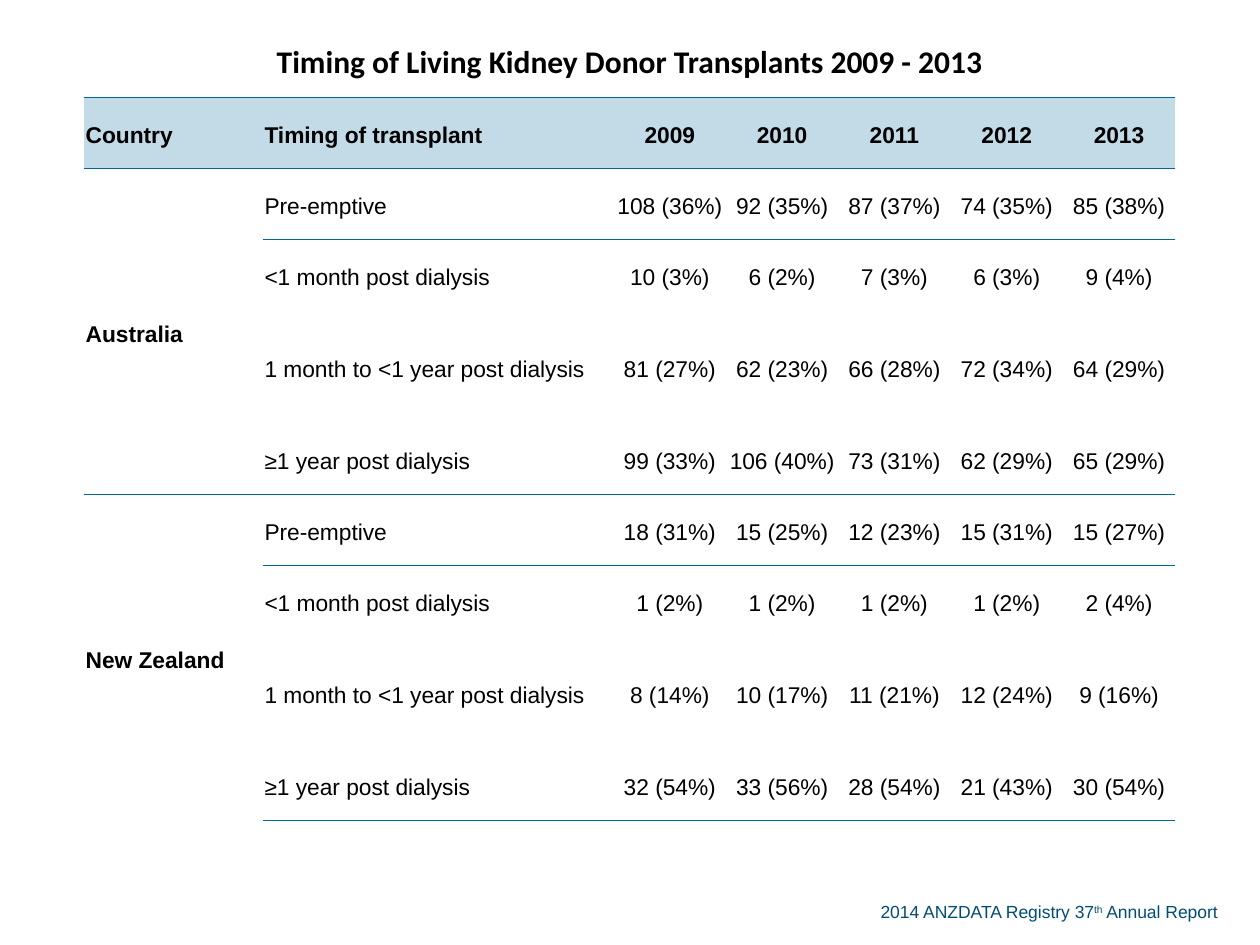
"""Build the slide on the timing of living kidney donor transplants."""
import lxml.etree
import pptx
import pptx.dml.color
import pptx.enum.text
import pptx.oxml.ns
import pptx.util

Pt = pptx.util.Pt
RGBColor = pptx.dml.color.RGBColor
ALIGN = pptx.enum.text.PP_ALIGN
qn = pptx.oxml.ns.qn

BLACK = RGBColor(0x00, 0x00, 0x00)
HEADER_BLUE = RGBColor(0xC2, 0xDB, 0xE7)
RULE_BLUE = RGBColor(0x00, 0x66, 0x99)
FOOTER_BLUE = RGBColor(0x00, 0x4D, 0x73)

TITLE = "Timing of Living Kidney Donor Transplants 2009 - 2013"
HEADER = ["Country", "Timing of transplant", "2009", "2010", "2011", "2012", "2013"]
TIMINGS = [
    "Pre-emptive",
    "<1 month post dialysis",
    "1 month to <1 year post dialysis",
    "≥1 year post dialysis",
]
COUNTRIES = {
    "Australia": [
        ["108 (36%)", "92 (35%)", "87 (37%)", "74 (35%)", "85 (38%)"],
        ["10 (3%)", "6 (2%)", "7 (3%)", "6 (3%)", "9 (4%)"],
        ["81 (27%)", "62 (23%)", "66 (28%)", "72 (34%)", "64 (29%)"],
        ["99 (33%)", "106 (40%)", "73 (31%)", "62 (29%)", "65 (29%)"],
    ],
    "New Zealand": [
        ["18 (31%)", "15 (25%)", "12 (23%)", "15 (31%)", "15 (27%)"],
        ["1 (2%)", "1 (2%)", "1 (2%)", "1 (2%)", "2 (4%)"],
        ["8 (14%)", "10 (17%)", "11 (21%)", "12 (24%)", "9 (16%)"],
        ["32 (54%)", "33 (56%)", "28 (54%)", "21 (43%)", "30 (54%)"],
    ],
}
FOOTER = [("2014 ANZDATA Registry 37", False), ("th", True), (" Annual Report", False)]

TABLE_LEFT, TABLE_TOP = 48.24, 15.12
COLUMN_WIDTHS = [102.2, 200.2] + [64.2] * 5
TIMING_HEIGHTS = [40.6, 40.6, 64.4, 40.6]
ROW_HEIGHTS = [40.6, 40.6] + TIMING_HEIGHTS * len(COUNTRIES)
NO_STYLE_NO_GRID = "{2D5ABB26-0587-4C30-8999-92F81FD0307C}"


def write_text(paragraph, text, size=13, font="Arial", color=BLACK, bold=False,
               align=ALIGN.LEFT, line_spacing=None, space_after=None, superscript=False):
    paragraph.alignment = align
    if line_spacing:
        paragraph.line_spacing = line_spacing
    if space_after:
        paragraph.space_after = Pt(space_after)
    run = paragraph.add_run()
    run.text = text
    run.font.size = Pt(size)
    run.font.name = font
    run.font.bold = bold
    run.font.color.rgb = color
    if superscript:
        run.font._element.set("baseline", "30000")


def add_rule(cell, tag):
    line = lxml.etree.SubElement(cell._tc.get_or_add_tcPr(), qn(tag), w=str(Pt(0.5)))
    fill = lxml.etree.SubElement(line, qn("a:solidFill"))
    lxml.etree.SubElement(fill, qn("a:srgbClr"), val=str(RULE_BLUE))


def add_table(slide):
    frame = slide.shapes.add_table(
        len(ROW_HEIGHTS), len(COLUMN_WIDTHS), Pt(TABLE_LEFT), Pt(TABLE_TOP),
        Pt(sum(COLUMN_WIDTHS)), Pt(sum(ROW_HEIGHTS)))
    table = frame.table
    table.horz_banding = False
    table._tbl.tblPr.find(qn("a:tableStyleId")).text = NO_STYLE_NO_GRID
    for column, width in zip(table.columns, COLUMN_WIDTHS):
        column.width = Pt(width)
    for row, height in zip(table.rows, ROW_HEIGHTS):
        row.height = Pt(height)

    body = [["", timing, *values]
            for rows in COUNTRIES.values() for timing, values in zip(TIMINGS, rows)]
    group_starts = range(2, len(ROW_HEIGHTS), len(TIMINGS))
    for start, country in zip(group_starts, COUNTRIES):
        body[start - 2][0] = country
        table.cell(start, 0).merge(table.cell(start + len(TIMINGS) - 1, 0))
    table.cell(0, 0).merge(table.cell(0, len(HEADER) - 1))

    ruled_tops = {1, *group_starts}
    ruled_bottoms = {top - 1 for top in ruled_tops} | {len(ROW_HEIGHTS) - 1}
    grid = [[TITLE] + [""] * (len(HEADER) - 1), HEADER, *body]
    for row_index, texts in enumerate(grid):
        for column_index, text in enumerate(texts):
            cell = table.cell(row_index, column_index)
            cell.margin_left = cell.margin_right = cell.margin_top = Pt(0.72)
            cell.margin_bottom = 0
            cell.vertical_anchor = pptx.enum.text.MSO_ANCHOR.MIDDLE
            if row_index in ruled_tops:
                add_rule(cell, "a:lnT")
            if row_index in ruled_bottoms:
                add_rule(cell, "a:lnB")
            if row_index == 1:
                cell.fill.solid()
                cell.fill.fore_color.rgb = HEADER_BLUE
            else:
                cell.fill.background()
            paragraph = cell.text_frame.paragraphs[0]
            if row_index == 0 and text:
                write_text(paragraph, text, size=18, font="Calibri", bold=True,
                           align=ALIGN.CENTER)
            elif text:
                write_text(paragraph, text, bold=row_index == 1 or column_index == 0,
                           align=ALIGN.CENTER if column_index > 1 else ALIGN.LEFT,
                           line_spacing=1.19, space_after=14)


def add_footer(slide):
    box = slide.shapes.add_textbox(Pt(496.08), Pt(511.2), Pt(215.28), Pt(19.44))
    box.text_frame.word_wrap = True
    paragraph = box.text_frame.paragraphs[0]
    for text, superscript in FOOTER:
        write_text(paragraph, text, size=10, color=FOOTER_BLUE, superscript=superscript)


def main():
    presentation = pptx.Presentation()
    presentation.slide_width, presentation.slide_height = Pt(720), Pt(540)
    slide = presentation.slides.add_slide(presentation.slide_layouts[6])
    add_footer(slide)
    add_table(slide)
    presentation.save("out.pptx")


if __name__ == "__main__":
    main()
